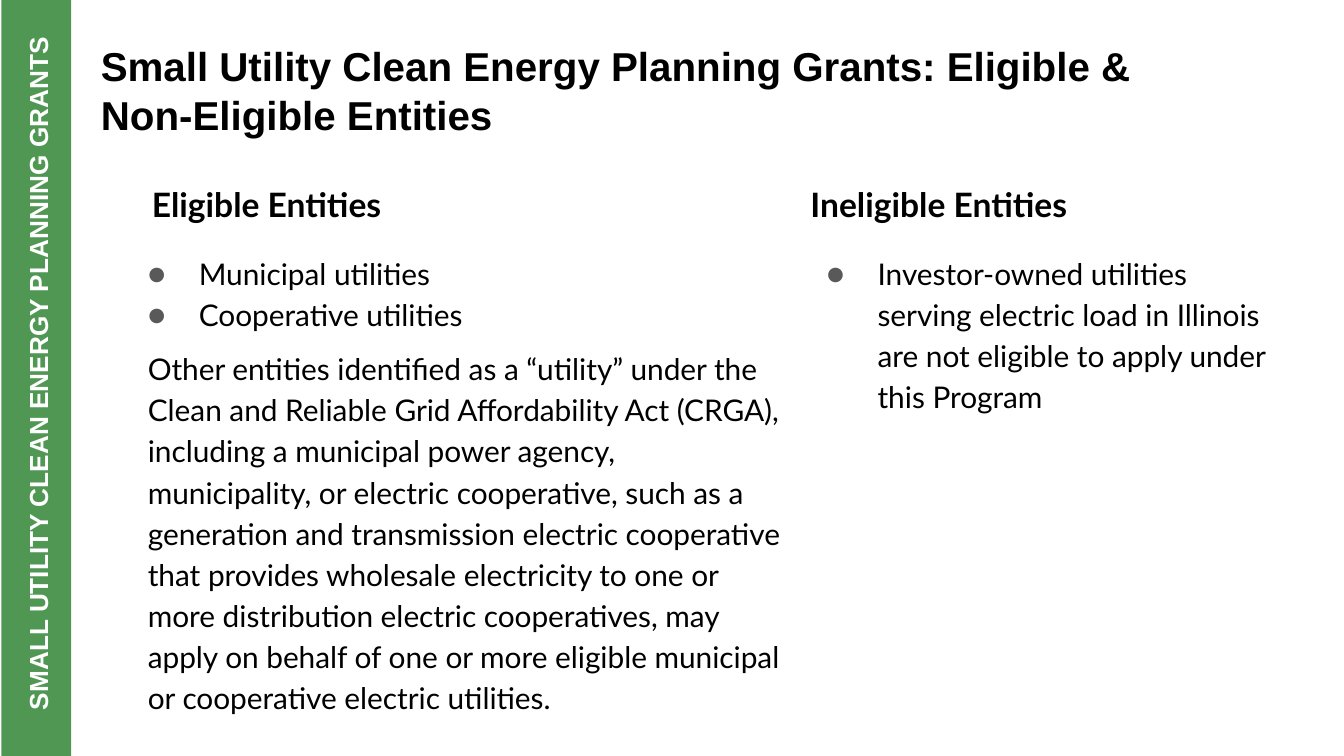
from dataclasses import dataclass

from lxml import etree
from pptx import Presentation, util as u
from pptx.dml.color import RGBColor
from pptx.enum import shapes, text
from pptx.oxml.ns import qn


@dataclass(frozen=True)
class Theme:
    green: str = "509753"
    white: str = "FFFFFF"
    black: str = "000000"
    bullet: str = "595959"
    head_font: str = "Arial"
    body_font: str = "Lato"
    banner_pt: float = 14
    title_pt: float = 21.6
    heading_pt: float = 18
    body_pt: float = 16


@dataclass(frozen=True)
class Box:
    left: float
    top: float
    width: float
    height: float


@dataclass(frozen=True)
class Para:
    text: str
    bullet: bool = False
    margin: float = 0
    before: float = 0


T = Theme()


@dataclass(frozen=True)
class Block:
    idx: int
    box: Box
    paras: list[Para]
    size: float
    font: str = T.body_font
    bold: bool = False
    spacing: float = 1.15
    anchor: text.MSO_ANCHOR = text.MSO_ANCHOR.TOP


def style_run(r, size: float, font: str, color: str, bold: bool) -> None:
    for name, value in dict(size=u.Pt(size), name=font, bold=bold).items():
        setattr(r.font, name, value)
    r.font.color.rgb = RGBColor.from_string(color)


def place(sp, box: Box) -> None:
    for name in ("left", "top", "width", "height"):
        setattr(sp, name, u.Inches(getattr(box, name)))


def set_frame(tf, inset: float, anchor: text.MSO_ANCHOR) -> None:
    sides = ("margin_left", "margin_top", "margin_right", "margin_bottom")
    values = dict.fromkeys(sides, u.Inches(inset))
    values.update(word_wrap=True, auto_size=text.MSO_AUTO_SIZE.NONE,
                  vertical_anchor=anchor)
    for name, value in values.items():
        setattr(tf, name, value)


def set_bullet(p, para: Para) -> None:
    pPr = p._p.get_or_add_pPr()
    hanging = -0.38 if para.bullet else 0
    pPr.set("marL", str(u.Inches(para.margin)))
    pPr.set("indent", str(u.Inches(hanging)))
    if para.bullet:
        clr = etree.SubElement(pPr, qn("a:buClr"))
        etree.SubElement(clr, qn("a:srgbClr"), val=T.bullet)
        etree.SubElement(pPr, qn("a:buFont"), typeface=T.body_font)
        etree.SubElement(pPr, qn("a:buChar"), char="●")
    else:
        etree.SubElement(pPr, qn("a:buNone"))


def fill_placeholder(s, block: Block) -> None:
    sp = s.placeholders[block.idx]
    place(sp, block.box)
    tf = sp.text_frame
    set_frame(tf, 0.1, block.anchor)
    for i, para in enumerate(block.paras):
        p = tf.add_paragraph() if i else tf.paragraphs[0]
        set_bullet(p, para)
        p.alignment = text.PP_ALIGN.LEFT
        p.line_spacing = block.spacing
        p.space_before = u.Pt(para.before)
        r = p.add_run()
        r.text = para.text
        style_run(r, block.size, block.font, T.black, block.bold)


def add_bar(s, box: Box, rotation: float = 0):
    sp = s.shapes.add_shape(shapes.MSO_SHAPE.RECTANGLE, 0, 0, 0, 0)
    place(sp, box)
    sp.rotation = rotation
    sp.shadow.inherit = False
    sp.fill.solid()
    sp.fill.fore_color.rgb = RGBColor.from_string(T.green)
    sp.line.fill.background()
    return sp


def heading(idx: int, box: Box, label: str) -> Block:
    return Block(idx, box, [Para(label)], T.heading_pt, bold=True,
                 anchor=text.MSO_ANCHOR.BOTTOM)


def item(label: str) -> Para:
    return Para(label, bullet=True, margin=0.5)


BLOCKS = [
    Block(0, Box(0.65, 0.21, 8.62, 0.68),
          [Para("Small Utility Clean Energy Planning Grants: Eligible & "
                "Non-Eligible Entities")],
          T.title_pt, font=T.head_font, bold=True, spacing=1),
    heading(1, Box(1.03, 1.09, 4.23, 0.68), "Eligible Entities"),
    Block(2, Box(0.88, 1.76, 5.05, 3.02), [
        item("Municipal utilities"),
        item("Cooperative utilities"),
        Para("Other entities identified as a “utility” under the Clean and "
             "Reliable Grid Affordability Act (CRGA), including a municipal "
             "power agency, municipality, or electric cooperative, such as a "
             "generation and transmission electric cooperative that provides "
             "wholesale electricity to one or more distribution electric "
             "cooperatives, may apply on behalf of one or more eligible "
             "municipal or cooperative electric utilities.",
             margin=0.12, before=7),
    ], T.body_pt),
    heading(3, Box(5.93, 1.09, 4.25, 0.68), "Ineligible Entities"),
    Block(4, Box(5.93, 1.76, 3.64, 3.02), [
        item("Investor-owned utilities serving electric load in Illinois are "
             "not eligible to apply under this Program"),
    ], T.body_pt),
]


def main() -> None:
    # Widescreen 16:9 slide
    prs = Presentation()
    prs.slide_width = u.Inches(10)
    prs.slide_height = u.Inches(10 * 9 / 16)
    s = prs.slides.add_slide(prs.slide_layouts.get_by_name("Comparison"))

    # Side banner with its vertical label
    add_bar(s, Box(0.01, 0, 0.52, 5.63))
    tf = add_bar(s, Box(-2.41, 2.64, 5.38, 0.28), rotation=270).text_frame
    set_frame(tf, 0.02, text.MSO_ANCHOR.MIDDLE)
    p = tf.paragraphs[0]
    p.alignment = text.PP_ALIGN.CENTER
    r = p.add_run()
    r.text = "SMALL UTILITY CLEAN ENERGY PLANNING GRANTS"
    style_run(r, T.banner_pt, T.head_font, T.white, True)

    # Title and the two columns
    for block in BLOCKS:
        fill_placeholder(s, block)

    prs.save("out.pptx")


if __name__ == "__main__":
    main()
